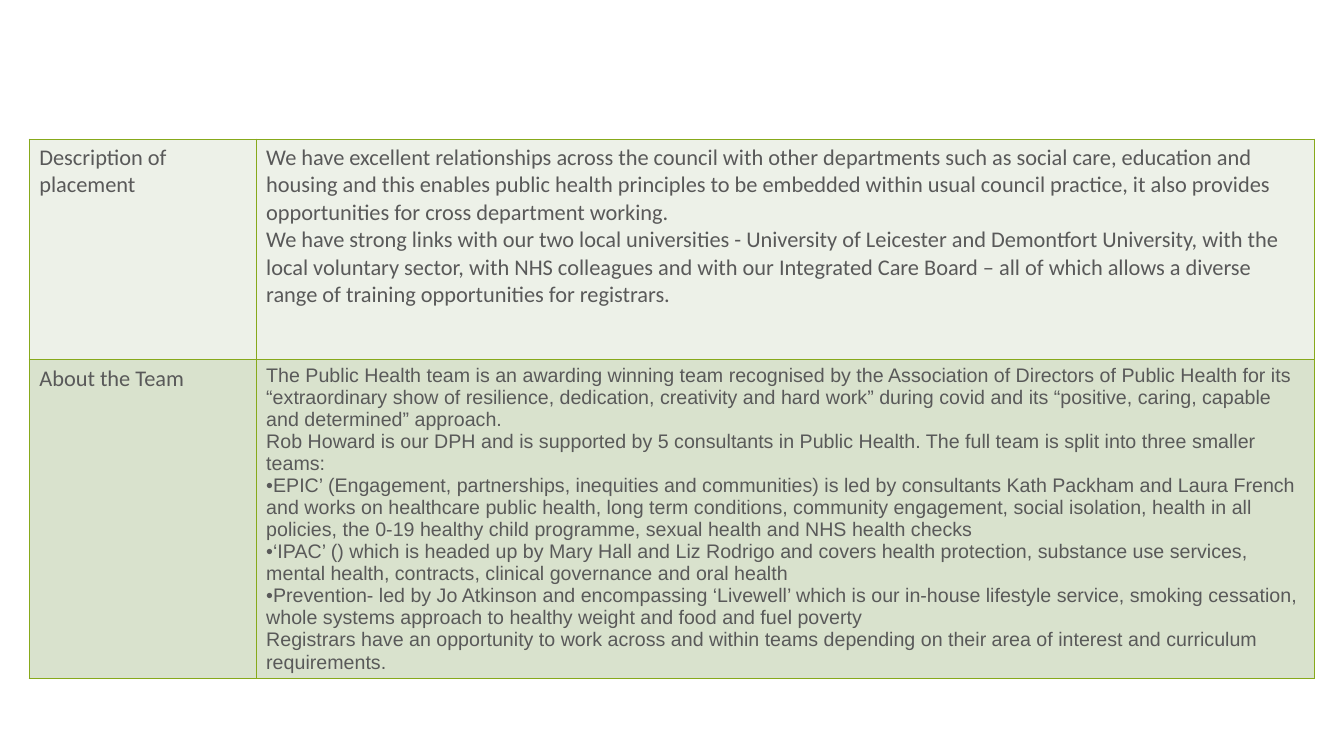
from pptx import Presentation
from pptx import util as u
from pptx.dml.color import RGBColor
from pptx.enum import text
from pptx.oxml import parse_xml
from pptx.oxml.ns import nsdecls

COLORS = {"ink": "595959", "border": "87A91B", "light": "EDF1E8", "dark": "D9E2CD"}

PLACEMENT = [
    "We have excellent relationships across the council with other departments such as social care, education and housing and this enables public health principles to be embedded within usual council practice, it also provides opportunities for cross department working.",
    "We have strong links with our two local universities - University of Leicester and Demontfort University, with the local voluntary sector, with NHS colleagues and with our Integrated Care Board – all of which allows a diverse range of training opportunities for registrars.",
]
TEAM = [
    "The Public Health team is an awarding winning team recognised by the Association of Directors of Public Health for its “extraordinary show of resilience, dedication, creativity and hard work” during covid and its “positive, caring, capable and determined” approach.",
    "Rob Howard is our DPH and is supported by 5 consultants in Public Health. The full team is split into three smaller teams:",
    "•EPIC’ (Engagement, partnerships, inequities and communities) is led by consultants Kath Packham and Laura French and works on healthcare public health, long term conditions, community engagement, social isolation, health in all policies, the 0-19 healthy child programme, sexual health and NHS health checks",
    "•‘IPAC’ () which is headed up by Mary Hall and Liz Rodrigo and covers health protection, substance use services, mental health, contracts, clinical governance and oral health",
    "•Prevention- led by Jo Atkinson and encompassing ‘Livewell’ which is our in-house lifestyle service, smoking cessation, whole systems approach to healthy weight and food and fuel poverty",
    "Registrars have an opportunity to work across and within teams depending on their area of interest and curriculum requirements.",
]


def write(frame, paragraphs, font="Calibri", size=16, color="ink", spacing=None):
    """Fill a text frame with evenly formatted paragraphs."""
    frame.word_wrap = True
    for index, wording in enumerate(paragraphs):
        paragraph = frame.paragraphs[0] if index == 0 else frame.add_paragraph()
        paragraph.alignment = text.PP_ALIGN.LEFT
        if spacing:
            paragraph.line_spacing = spacing
        run = paragraph.add_run()
        run.text = wording
        run.font.name = font
        run.font.size = u.Pt(size)
        run.font.bold = False
        run.font.color.rgb = RGBColor.from_string(COLORS[color])


class PlacementSlide:
    """Hold the slide and its table style."""

    def __init__(self, deck):
        """Add a blank slide to the deck."""
        self.width, self.height = deck.slide_width, deck.slide_height
        self.slide = deck.slides.add_slide(deck.slide_layouts[6])

    def table(self, left, top, columns, rows):
        """Add a plain table sized in shares of the slide."""
        widths = [int(self.width * share) for share in columns]
        heights = [int(self.height * share) for share in rows]
        grid = self.slide.shapes.add_table(
            len(rows), len(columns), int(self.width * left), int(self.height * top),
            sum(widths), sum(heights)).table
        grid.first_row = grid.horz_banding = False
        for column, width in zip(grid.columns, widths):
            column.width = width
        for row, height in zip(grid.rows, heights):
            row.height = height
        return grid

    def cell(self, cell, paragraphs, fill, **style):
        """Write, border and fill one table cell."""
        write(cell.text_frame, paragraphs, **style)
        cell.vertical_anchor = text.MSO_ANCHOR.TOP
        properties = cell._tc.get_or_add_tcPr()
        for side in ("lnL", "lnR", "lnT", "lnB"):
            properties.append(parse_xml(
                f'<a:{side} {nsdecls("a")} w="{u.Pt(1)}"><a:solidFill>'
                f'<a:srgbClr val="{COLORS["border"]}"/></a:solidFill></a:{side}>'))
        cell.fill.solid()
        cell.fill.fore_color.rgb = RGBColor.from_string(COLORS[fill])


def main():
    """Build and save the placement slide."""
    deck = Presentation()
    deck.slide_width, deck.slide_height = u.Inches(13.33), u.Inches(7.5)
    page = PlacementSlide(deck)
    details = page.table(left=0.0218, top=0.184, columns=(0.1688, 0.7877), rows=(0.292, 0.42))
    sections = [
        ("Description of placement", PLACEMENT, "light", {}),
        ("About the Team", TEAM, "dark", {"font": "Arial", "size": 14}),
    ]
    for row, (heading, body, fill, style) in enumerate(sections):
        page.cell(details.cell(row, 0), [heading], fill)
        page.cell(details.cell(row, 1), body, fill, **style)
    deck.save("out.pptx")


if __name__ == "__main__":
    main()
